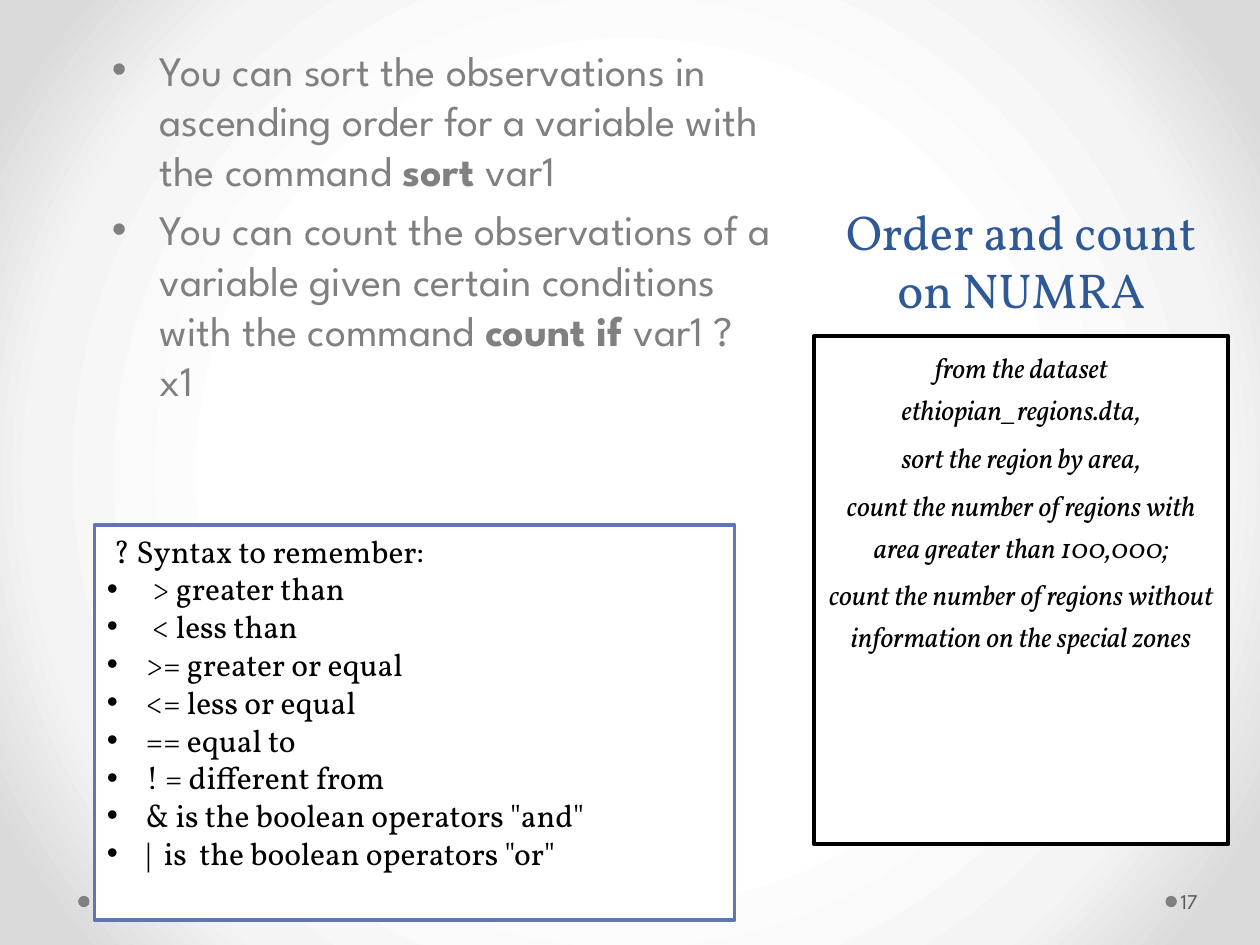
import pptx
import pptx.util
import pptx.dml.color
import pptx.enum.shapes
import pptx.enum.text
import pptx.oxml
import pptx.oxml.ns
from pptx.util import Inches

# Content
TITLE = "Order and count on NUMRA"
COMMANDS = [
    [("You can sort the observations in ascending order for a variable with the command ", False),
     ("sort ", True), ("var1", False)],
    [("You can count the observations of a variable given certain conditions with the command ", False),
     ("count if ", True), ("var1 ? x1", False)],
]
EXERCISE = [
    "from the dataset ethiopian_regions.dta,",
    "sort the region by area,",
    "count the number of regions with area greater than 100,000;",
    "count the number of regions without information on the special zones",
]
SYNTAX_HEADING = " ? Syntax to remember:"
SYNTAX = [
    " > greater than",
    " < less than",
    ">= greater or equal",
    "<= less or equal",
    "== equal to",
    "! = different from",
    '& is the boolean operators "and"',
    '|  is  the boolean operators "or"',
]
PAGE_NUMBER = "17"

# Style
COLORS = {"title": "2F5897", "grey": "808080", "black": "000000", "white": "FFFFFF",
          "number": "595959", "frame": "6076B4"}
BACKGROUND_STOPS = [(50, "FFFFFF"), (76, "F4F4F4"), (92, "DADADA")]
SANS, SERIF = "League Spartan", "Vollkorn"
ALIGN = pptx.enum.text.PP_ALIGN
ANCHOR = pptx.enum.text.MSO_ANCHOR
SHAPES = pptx.enum.shapes.MSO_SHAPE


def rgb(name):
    return pptx.dml.color.RGBColor.from_string(COLORS[name])


def paint_background(page):
    fill = page.background.fill
    fill.gradient()
    gradient = page.background._cSld.find(".//" + pptx.oxml.ns.qn("a:gradFill"))
    stops = "".join(f'<a:gs pos="{pos * 1000}"><a:srgbClr val="{color}"/></a:gs>'
                    for pos, color in BACKGROUND_STOPS)
    radial = pptx.oxml.parse_xml(
        f'<a:gradFill {pptx.oxml.ns.nsdecls("a")} rotWithShape="1"><a:gsLst>{stops}</a:gsLst>'
        '<a:path path="circle"><a:fillToRect l="50000" t="50000" r="50000" b="50000"/></a:path>'
        '</a:gradFill>')
    gradient.getparent().replace(gradient, radial)


def place(shape, left, top, width, height):
    shape.left, shape.top = Inches(left), Inches(top)
    shape.width, shape.height = Inches(width), Inches(height)


def add_box(page, kind, area, fill, line=None):
    box = page.shapes.add_shape(kind, *map(Inches, area))
    box.shadow.inherit = False
    box.fill.solid()
    box.fill.fore_color.rgb = rgb(fill)
    if line:
        box.line.color.rgb = rgb(line)
        box.line.width = pptx.util.Pt(2.25)
    else:
        box.line.fill.background()
    return box


def add_text_box(page, area):
    return page.shapes.add_textbox(*map(Inches, area))


def add_bullet(para, indent):
    properties = para._p.get_or_add_pPr()
    properties.set("marL", str(Inches(indent)))
    properties.set("indent", str(-Inches(indent)))
    for tag in ('buFont {} typeface="Arial"', 'buChar {} char="•"'):
        properties.append(pptx.oxml.parse_xml(
            "<a:" + tag.format(pptx.oxml.ns.nsdecls("a")) + "/>"))


def write(shape, paragraphs, font, size, color, anchor=ANCHOR.TOP, align=ALIGN.LEFT,
          italic=False, indent=0, plain=0, gap=0, spacing=None):
    """Fill a shape; the first `plain` paragraphs carry no bullet."""
    frame = shape.text_frame
    frame.word_wrap = True
    frame.vertical_anchor = anchor
    for index, spans in enumerate(paragraphs):
        para = frame.paragraphs[0] if index == 0 else frame.add_paragraph()
        para.alignment = align
        if spacing:
            para.line_spacing = spacing
        para.space_before = pptx.util.Pt(gap if index else 0)
        if indent and index >= plain:
            add_bullet(para, indent)
        for text, bold in spans:
            span = para.add_run()
            span.text = text
            span.font.name = font
            span.font.size = pptx.util.Pt(size)
            span.font.color.rgb = rgb(color)
            span.font.bold = bold
            span.font.italic = italic


def regular(lines):
    return [[(line, False)] for line in lines]


def main():
    deck = pptx.Presentation()
    deck.slide_width, deck.slide_height = Inches(10), Inches(7.5)
    page = deck.slides.add_slide(deck.slide_layouts[5])
    paint_background(page)

    # Footer dots
    for left in (9.25, 0.62):
        add_box(page, SHAPES.OVAL, (left, 7.11, 0.09, 0.09), "grey")

    # Title
    title = page.shapes.title
    place(title, 6.46, 0.29, 3.29, 2.29)
    write(title, regular([TITLE]), SERIF, 28, "title", ANCHOR.BOTTOM, ALIGN.CENTER)

    # Commands
    commands = add_text_box(page, (0.79, 0.3, 5.46, 3.95))
    write(commands, COMMANDS, SANS, 24, "grey", indent=0.38, gap=4.8)

    # Exercise
    exercise = add_box(page, SHAPES.RECTANGLE, (6.46, 2.67, 3.29, 4.03), "white", "black")
    write(exercise, regular(EXERCISE), SERIF, 16, "black", align=ALIGN.CENTER,
          italic=True, gap=3.2, spacing=1.25)

    # Page number
    number = add_text_box(page, (9.34, 6.95, 0.61, 0.4))
    number.text_frame.margin_left = Inches(0.03)
    number.text_frame.margin_right = Inches(0.05)
    write(number, regular([PAGE_NUMBER]), SANS, 12, "number", ANCHOR.MIDDLE)

    # Syntax reference
    syntax = add_box(page, SHAPES.RECTANGLE, (0.75, 4.17, 5.08, 3.13), "white", "frame")
    write(syntax, regular([SYNTAX_HEADING] + SYNTAX), SERIF, 18, "black",
          indent=0.31, plain=1)

    deck.save("out.pptx")


if __name__ == "__main__":
    main()
